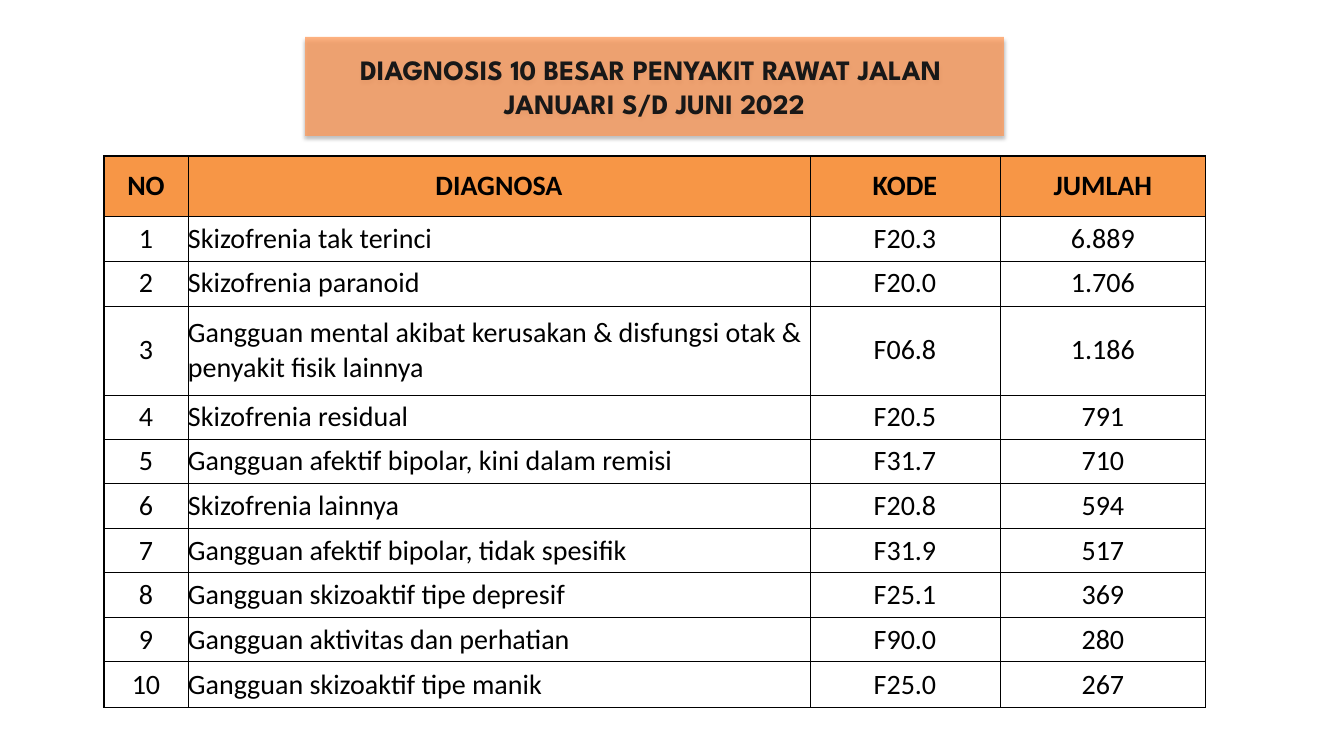
import pptx
import pptx.util
import pptx.dml.color
import pptx.enum.text
import pptx.oxml
import pptx.oxml.ns

RGB = pptx.dml.color.RGBColor
ALIGN = pptx.enum.text.PP_ALIGN
MIDDLE = pptx.enum.text.MSO_ANCHOR.MIDDLE
Pt = pptx.util.Pt
qn = pptx.oxml.ns.qn

PEACH = RGB(0xFF, 0x98, 0x56)
ORANGE = RGB(0xF7, 0x96, 0x46)
DARK = RGB(0x18, 0x18, 0x18)
BLACK = RGB(0, 0, 0)

TITLE = "DIAGNOSIS 10 BESAR PENYAKIT RAWAT JALAN \vJANUARI S/D JUNI 2022"
HEADS = ("NO", "DIAGNOSA", "KODE", "JUMLAH")
CASES = [
    ("Skizofrenia tak terinci", "F20.3", "6.889"),
    ("Skizofrenia paranoid", "F20.0", "1.706"),
    ("Gangguan mental akibat kerusakan & disfungsi otak & penyakit fisik lainnya",
     "F06.8", "1.186"),
    ("Skizofrenia residual", "F20.5", "791"),
    ("Gangguan afektif bipolar, kini dalam remisi", "F31.7", "710"),
    ("Skizofrenia lainnya", "F20.8", "594"),
    ("Gangguan afektif bipolar, tidak spesifik", "F31.9", "517"),
    ("Gangguan skizoaktif tipe depresif", "F25.1", "369"),
    ("Gangguan aktivitas dan perhatian", "F90.0", "280"),
    ("Gangguan skizoaktif tipe manik", "F25.0", "267"),
]
WIDTHS = (84, 622, 190, 206)
HEIGHTS = (60, 45, 45, 89, 44, 45, 45, 44, 45, 44, 46)


def px(count):
    return round(count * 914400 / 100.8)


def node(tag, inner="", **attrs):
    text = "".join(f' {key}="{val}"' for key, val in attrs.items())
    space = pptx.oxml.ns.nsdecls("a")
    return pptx.oxml.parse_xml(f"<a:{tag} {space}{text}>{inner}</a:{tag}>")


def style(target, values):
    for key, val in values.items():
        setattr(target, key, val)


class Deck:
    head = {"name": "League Spartan", "size": Pt(20), "bold": True}
    body = {"name": "Calibri", "size": Pt(20)}

    def __init__(self):
        self.file = pptx.Presentation()
        self.file.slide_width, self.file.slide_height = px(1344), px(756)
        self.slide = self.file.slides.add_slide(self.file.slide_layouts[5])

    def label(self, frame, text, font, color, align):
        frame.text = text
        para = frame.paragraphs[0]
        para.alignment = align
        for run in para.runs:
            style(run.font, font)
            run.font.color.rgb = color

    def title(self, text, left, top, width, height):
        box = self.slide.shapes.title
        style(box, {"left": px(left), "top": px(top),
                    "width": px(width), "height": px(height)})
        box.fill.solid()
        box.fill.fore_color.rgb = PEACH
        box.line.fill.background()
        # See-through fill and soft shadow
        props = box._element.spPr
        props.find(qn("a:solidFill"))[0].append(node("alpha", val=74000))
        box.shadow.inherit = False
        shade = '<a:srgbClr val="000000"><a:alpha val="35000"/></a:srgbClr>'
        props.find(qn("a:effectLst")).append(node(
            "outerShdw", shade, blurRad=Pt(3.1), dist=Pt(1.8),
            dir=5400000, rotWithShape=0))
        frame = box.text_frame
        inset = px(13)
        style(frame, {"word_wrap": True, "vertical_anchor": MIDDLE,
                      "auto_size": pptx.enum.text.MSO_AUTO_SIZE.NONE,
                      "margin_left": inset, "margin_right": inset,
                      "margin_top": inset, "margin_bottom": inset})
        self.label(frame, text, self.head, DARK, ALIGN.CENTER)

    def border(self, cell, outer):
        props = cell._tc.get_or_add_tcPr()
        ink = f'<a:solidFill><a:srgbClr val="{BLACK}"/></a:solidFill>'
        for side, edge in outer.items():
            props.append(node("ln" + side, ink, w=Pt(1 if edge else 0.5)))

    def table(self, rows, left, top, widths, heights):
        grid = self.slide.shapes.add_table(
            len(rows), len(widths), px(left), px(top),
            px(sum(widths)), px(sum(heights))).table
        grid.horz_banding = False
        for col, width in zip(grid.columns, widths):
            col.width = px(width)
        for row, height in zip(grid.rows, heights):
            row.height = px(height)
        for r, row in enumerate(rows):
            for c, text in enumerate(row):
                cell = grid.cell(r, c)
                style(cell, {"margin_left": 0, "margin_right": 0, "margin_top": 0,
                             "margin_bottom": 0, "vertical_anchor": MIDDLE})
                # Outer edges are heavier than inner ones
                self.border(cell, {"L": c == 0, "R": c == len(widths) - 1,
                                   "T": r == 0, "B": r == len(rows) - 1})
                if r == 0:
                    cell.fill.solid()
                    cell.fill.fore_color.rgb = ORANGE
                else:
                    cell.fill.background()
                align = ALIGN.LEFT if r and c == 1 else ALIGN.CENTER
                self.label(cell.text_frame, text,
                           {**self.body, "bold": r == 0}, BLACK, align)


def main():
    deck = Deck()
    # Heading
    deck.title(TITLE, 305, 37, 699, 99)
    # Diagnosis table
    rows = [HEADS] + [(str(n), *case) for n, case in enumerate(CASES, 1)]
    deck.table(rows, 104, 156, WIDTHS, HEIGHTS)
    deck.file.save("out.pptx")


if __name__ == "__main__":
    main()
